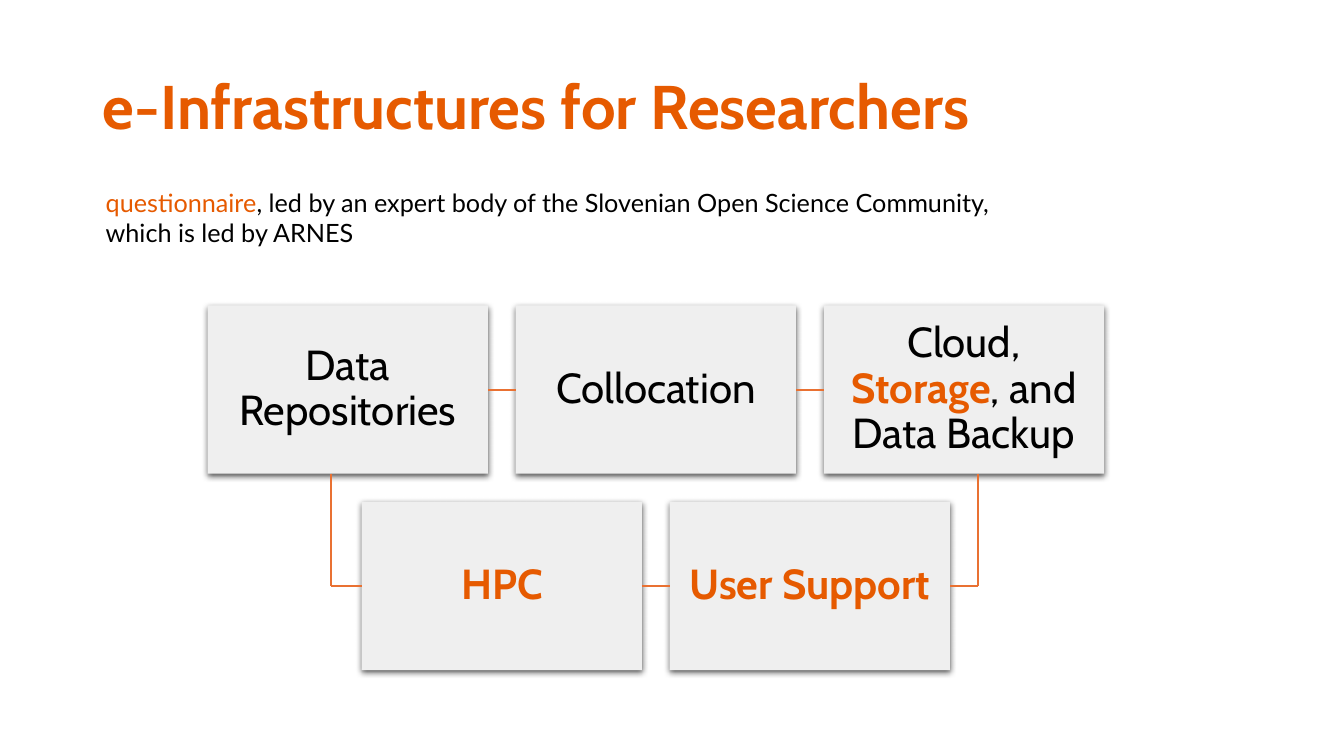
from dataclasses import dataclass

from lxml.etree import SubElement
from pptx import Presentation
from pptx.dml.color import RGBColor
from pptx.enum.shapes import MSO_CONNECTOR, MSO_SHAPE
from pptx.enum.text import MSO_ANCHOR, MSO_AUTO_SIZE, PP_ALIGN
from pptx.oxml.ns import qn
from pptx.util import Inches, Pt


@dataclass(frozen=True)
class Theme:
    accent: RGBColor = RGBColor.from_string("E65A00")
    text: RGBColor = RGBColor.from_string("000000")
    box: RGBColor = RGBColor.from_string("EFEFEF")
    link: RGBColor = RGBColor.from_string("E97132")
    heading_font: str = "Cabin"
    body_font: str = "Lato"
    title_size: Pt = Pt(44)
    box_size: Pt = Pt(30)
    body_size: Pt = Pt(18)
    link_width: Pt = Pt(1.5)


LEFT, CENTRE = PP_ALIGN.LEFT, PP_ALIGN.CENTER
RIGHT_SIDE, LEFT_SIDE = 3, 1
BOX_WIDTH, BOX_HEIGHT = 2.78, 1.67
FIRST_LEFT, COLUMN_STEP = 2.06, 3.055
TOP_ROW, BOTTOM_ROW = 3.03, 4.98


def set_values(target, values):
    for name, value in values.items():
        setattr(target, name, value)


class SlideBuilder:
    def __init__(self, slide, theme):
        self.slide = slide
        self.theme = theme

    def add_runs(self, paragraph, runs, font, paragraph_format):
        """Add (text, highlighted) runs; font["bold"] applies to highlights only."""
        set_values(paragraph, paragraph_format)
        for text, highlighted in runs:
            run = paragraph.add_run()
            run.text = text
            set_values(run.font, {
                "name": font["name"],
                "size": font["size"],
                "bold": highlighted and font["bold"],
            })
            run.font.color.rgb = self.theme.accent if highlighted else self.theme.text

    def title(self, text, left, top, width, height):
        title = self.slide.shapes.title
        set_values(title, {"left": Inches(left), "top": Inches(top),
                           "width": Inches(width), "height": Inches(height)})
        set_values(title.text_frame, {"vertical_anchor": MSO_ANCHOR.MIDDLE,
                                      "auto_size": MSO_AUTO_SIZE.NONE})
        font = {"name": self.theme.heading_font, "size": self.theme.title_size, "bold": True}
        self.add_runs(title.text_frame.paragraphs[0], [(text, True)], font,
                      {"alignment": LEFT, "line_spacing": 0.9})

    def introduction(self, runs, left, top, width, height, indent):
        shape = self.slide.shapes.add_textbox(
            Inches(left), Inches(top), Inches(width), Inches(height))
        set_values(shape.text_frame, {"word_wrap": True,
                                      "auto_size": MSO_AUTO_SIZE.SHAPE_TO_FIT_TEXT})
        paragraph = shape.text_frame.paragraphs[0]
        properties = paragraph._p.get_or_add_pPr()
        properties.set("marL", str(Inches(indent)))
        properties.set("indent", "0")
        font = {"name": self.theme.body_font, "size": self.theme.body_size, "bold": False}
        self.add_runs(paragraph, runs, font, {"alignment": LEFT})

    def box(self, runs, left, top):
        shape = self.slide.shapes.add_shape(
            MSO_SHAPE.RECTANGLE, Inches(left), Inches(top),
            Inches(BOX_WIDTH), Inches(BOX_HEIGHT))
        shape.fill.solid()
        shape.fill.fore_color.rgb = self.theme.box
        shape.line.fill.background()
        self.drop_shadow(shape)
        margins = {f"margin_{side}": Inches(0.12)
                   for side in ("left", "top", "right", "bottom")}
        set_values(shape.text_frame, {
            "word_wrap": True, "vertical_anchor": MSO_ANCHOR.MIDDLE, **margins})
        font = {"name": self.theme.heading_font, "size": self.theme.box_size, "bold": True}
        self.add_runs(shape.text_frame.paragraphs[0], runs, font,
                      {"alignment": CENTRE, "line_spacing": 0.9})
        return shape

    def drop_shadow(self, shape):
        shape.shadow.inherit = False
        effects = shape._element.spPr.find(qn("a:effectLst"))
        shadow = SubElement(effects, qn("a:outerShdw"), blurRad=str(Pt(4.5)),
                            dist=str(Pt(1.5)), dir="5400000", rotWithShape="0")
        color = SubElement(shadow, qn("a:srgbClr"), val=str(self.theme.text))
        SubElement(color, qn("a:alpha"), val="63000")

    def link(self, start=(0, 0), end=(0, 0), begin_joint=None, end_joint=None):
        """Draw a line; a joint is (box, side) and overrides that end's point."""
        points = [Inches(value) for value in (*start, *end)]
        connector = self.slide.shapes.add_connector(MSO_CONNECTOR.STRAIGHT, *points)
        if begin_joint:
            connector.begin_connect(*begin_joint)
        if end_joint:
            connector.end_connect(*end_joint)
        connector.line.color.rgb = self.theme.link
        connector.line.width = self.theme.link_width
        SubElement(connector._element.spPr, qn("a:effectLst"))


def main():
    presentation = Presentation()
    set_values(presentation, {"slide_width": Inches(13.33), "slide_height": Inches(7.5)})
    slide = presentation.slides.add_slide(presentation.slide_layouts[5])
    builder = SlideBuilder(slide, Theme())

    builder.title("e-Infrastructures for Researchers", 0.92, 0.36, 11.5, 1.45)
    builder.introduction([
        ("questionnaire", True),
        (", led by an expert body of the Slovenian Open Science Community, "
         "which is led by ARNES", False),
    ], 0.45, 1.81, 9.73, 0.71, indent=0.5)

    rows = [
        (TOP_ROW, 0, [
            [("Data Repositories", False)],
            [("Collocation", False)],
            [("Cloud, ", False), ("Storage", True), (", and Data Backup", False)],
        ]),
        (BOTTOM_ROW, 0.5, [[("HPC", True)], [("User Support", True)]]),
    ]
    for top, offset, labels in rows:
        boxes = [builder.box(runs, FIRST_LEFT + (offset + column) * COLUMN_STEP, top)
                 for column, runs in enumerate(labels)]
        for box, next_box in zip(boxes, boxes[1:]):
            builder.link(begin_joint=(box, RIGHT_SIDE), end_joint=(next_box, LEFT_SIDE))

    hpc, user_support = boxes
    corner_y = BOTTOM_ROW + BOX_HEIGHT / 2
    for corner_x, box, side in ((3.28, hpc, LEFT_SIDE), (9.7, user_support, RIGHT_SIDE)):
        corner = (corner_x, corner_y)
        builder.link(start=(corner_x, TOP_ROW + BOX_HEIGHT), end=corner)
        builder.link(start=corner, end_joint=(box, side))

    presentation.save("out.pptx")


if __name__ == "__main__":
    main()
